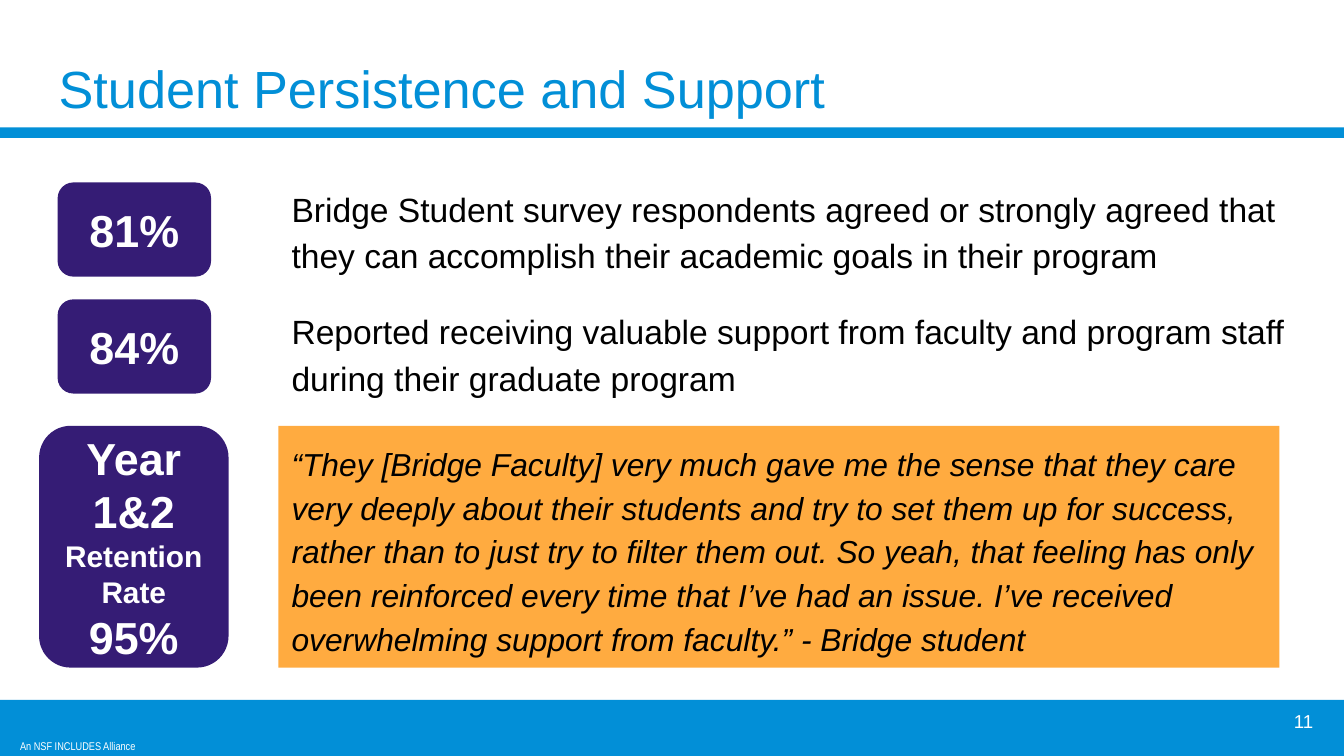
from pptx import Presentation
from pptx.dml.color import RGBColor
from pptx.enum import shapes, text
from pptx.oxml.xmlchemy import OxmlElement
from pptx.util import Cm, Pt

BLUE = RGBColor(0x02, 0x8F, 0xD7)
PURPLE = RGBColor(0x35, 0x1C, 0x75)
ORANGE = RGBColor(0xFF, 0xAB, 0x40)
WHITE = RGBColor(0xFF, 0xFF, 0xFF)
BLACK = RGBColor(0, 0, 0)

WIDTH, HEIGHT = 25.4, 14.29
TEXT_X = 5.26
LOW_Y, LOW_H = 8.05, 4.57
LEFT, CENTER, RIGHT = (text.PP_ALIGN.LEFT, text.PP_ALIGN.CENTER,
                       text.PP_ALIGN.RIGHT)
TOP, MIDDLE = text.MSO_ANCHOR.TOP, text.MSO_ANCHOR.MIDDLE
RECT = shapes.MSO_SHAPE.RECTANGLE
ROUND = shapes.MSO_SHAPE.ROUNDED_RECTANGLE

FINDINGS = [
    ("81%", "Bridge Student survey respondents agreed or strongly agreed that "
            "they can accomplish their academic goals in their program"),
    ("84%", "Reported receiving valuable support from faculty and program "
            "staff during their graduate program"),
]
RETENTION = [("Year 1&2", 24), ("Retention", 16), ("Rate", 16), ("95%", 24)]
QUOTE = (
    "“They [Bridge Faculty] very much gave me the sense that they care very "
    "deeply about their students and try to set them up for success, rather "
    "than to just try to filter them out. So yeah, that feeling has only been "
    "reinforced every time that I’ve had an issue. I’ve received overwhelming "
    "support from faculty.” - Bridge student"
)


def place(item, x, y, w, h):
    item.left, item.top, item.width, item.height = map(Cm, (x, y, w, h))


def write(item, lines, color, align=LEFT, anchor=TOP, inset=0.25,
          face="Arial", bold=False, italic=False, spacing=1.0, gap=0):
    """Fill the item with (words, size) lines, gap points apart."""
    frame = item.text_frame
    frame.word_wrap = True
    frame.auto_size = text.MSO_AUTO_SIZE.NONE
    frame.vertical_anchor = anchor
    frame.margin_left = frame.margin_right = Cm(inset)
    frame.margin_top = frame.margin_bottom = Cm(inset)
    for i, (words, size) in enumerate(lines):
        para = frame.add_paragraph() if i else frame.paragraphs[0]
        para.text = words
        para.alignment = align
        para.line_spacing = spacing
        para.space_before = Pt(gap if i else 0)
        font = para.font
        font.name, font.size, font.color.rgb = face, Pt(size), color
        font.bold, font.italic = bold, italic


def add_block(slide, kind, box, fill):
    block = slide.shapes.add_shape(kind, *map(Cm, box))
    block.shadow.inherit = False
    block.fill.solid()
    block.fill.fore_color.rgb = fill
    block.line.fill.background()
    return block


def add_badge(slide, box, lines):
    badge = add_block(slide, ROUND, box, PURPLE)
    write(badge, lines, WHITE, CENTER, MIDDLE, bold=True)


def add_label(slide, box, words, size, **style):
    label = slide.shapes.add_textbox(*map(Cm, box))
    write(label, [(words, size)], WHITE, **style)


def drop_bullets(item):
    for para in item.text_frame.paragraphs:
        props = para._p.get_or_add_pPr()
        props.set("marL", "0")
        props.set("indent", "0")
        props.insert_element_before(OxmlElement("a:buNone"), "a:tabLst",
                                    "a:defRPr", "a:extLst")


def main():
    deck = Presentation()
    deck.slide_width, deck.slide_height = Cm(WIDTH), Cm(HEIGHT)
    slide = deck.slides.add_slide(deck.slide_layouts[1])
    title, body = slide.placeholders

    add_block(slide, RECT, (0, 13.23, WIDTH, HEIGHT - 13.23), BLUE)
    add_block(slide, RECT, (0, 2.41, WIDTH, 0.2), BLUE)
    add_label(slide, (0.38, 13.97, 2.31, 0.25), "An NSF INCLUDES Alliance", 6,
              face="Arial Narrow", inset=0)
    add_label(slide, (23.55, 13.23, 1.52, 0.81), "11", 10,
              align=RIGHT, anchor=MIDDLE)

    place(title, 0.86, 0.81, 23.67, 1.6)
    write(title, [("Student Persistence and Support", 28)], BLUE)
    place(body, TEXT_X, 3.2, 19.28, 4.72)
    write(body, [(words, 18) for _, words in FINDINGS], BLACK,
          spacing=1.15, gap=16)
    drop_bullets(body)

    for i, (share, _) in enumerate(FINDINGS):
        add_badge(slide, (1.09, 3.45 + 2.21 * i, 2.9, 1.78), [(share, 24)])
    quote = add_block(slide, RECT, (TEXT_X, LOW_Y, 18.92, LOW_H), ORANGE)
    write(quote, [(QUOTE, 17)], BLACK, italic=True, spacing=1.15)
    add_badge(slide, (0.74, LOW_Y, 3.58, LOW_H), RETENTION)

    deck.save("out.pptx")


if __name__ == "__main__":
    main()
